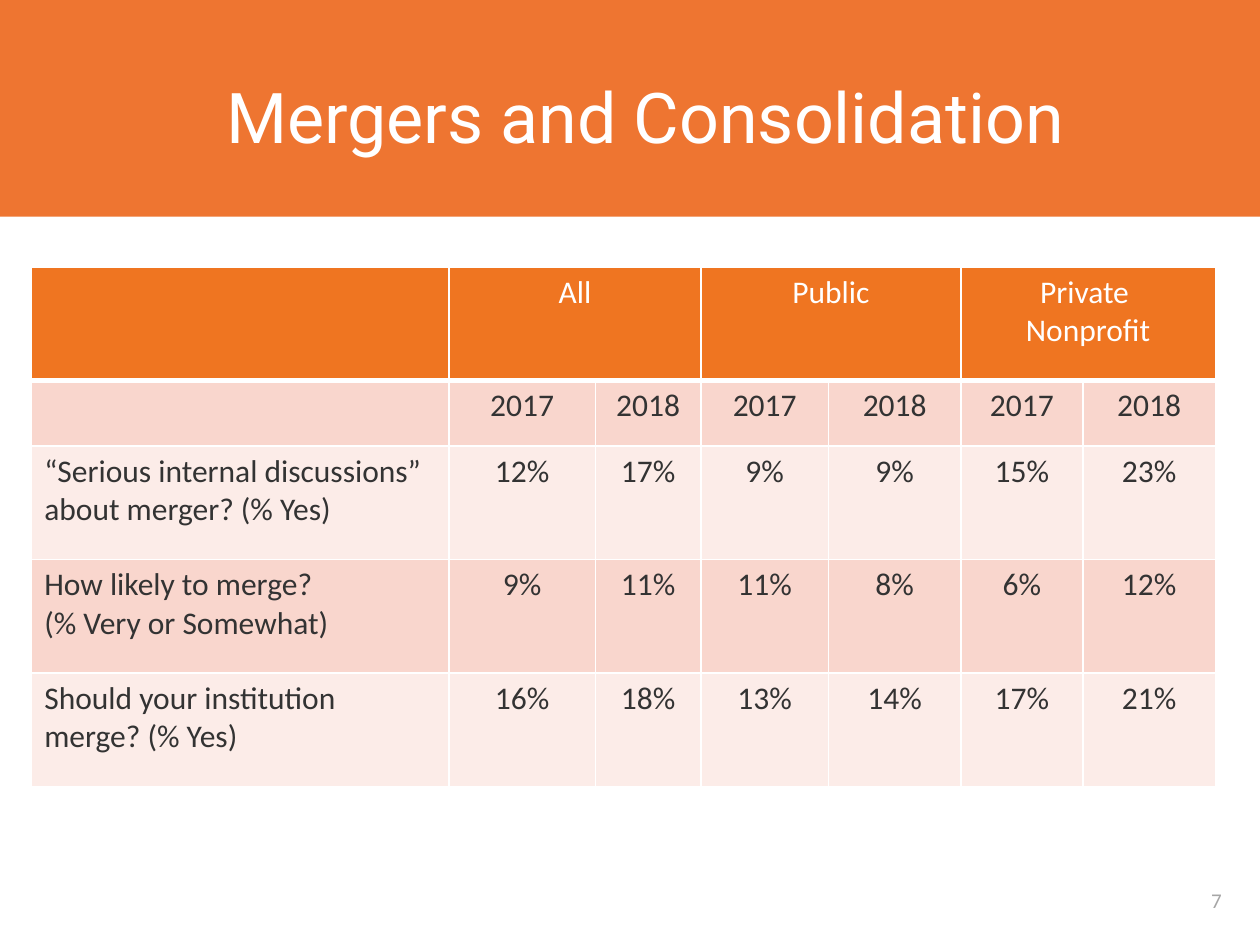
from lxml import etree
from pptx import Presentation
from pptx.dml.color import RGBColor
from pptx.enum.shapes import MSO_SHAPE
from pptx.enum.text import MSO_ANCHOR, PP_ALIGN
from pptx.oxml.ns import qn
from pptx.util import Cm, Pt

RECT = MSO_SHAPE.RECTANGLE
MIDDLE = MSO_ANCHOR.MIDDLE
LEFT, CENTER = PP_ALIGN.LEFT, PP_ALIGN.CENTER

TITLE = "Mergers and Consolidation"
PAGE = "7"
GROUPS = ["All", "Public", "Private \vNonprofit"]
YEARS = ["2017", "2018"]
ROWS = [
    ("“Serious internal discussions” \vabout merger? (% Yes)", [12, 17, 9, 9, 15, 23]),
    ("How likely to merge? \v(% Very or Somewhat)", [9, 11, 11, 8, 6, 12]),
    ("Should your institution merge? (% Yes)", [16, 18, 13, 14, 17, 21]),
]
WIDTHS = [8.41, 2.95, 2.13, 2.57, 2.67, 2.46, 2.67]
TALL, SHORT = 2.29, 1.32

WHITE, INK, GRAY = "FFFFFF", "333333", "A6A6A6"
BAND, HEAD = "EE7531", "EF7521"
STRIPES = ["F9D6CD", "FCECE8"]


def color(code):
    return RGBColor.from_string(code)


def write(frame, text, size, font, ink, align=CENTER):
    """Fill the frame with one styled paragraph and return it."""
    para = frame.paragraphs[0]
    para.text = text
    para.alignment = align
    for run in para.runs:
        run.font.size = Pt(size)
        run.font.name = font
        run.font.color.rgb = color(ink)
    return para


def add_label(slide, box, *style):
    frame = slide.shapes.add_textbox(*map(Cm, box)).text_frame
    frame.word_wrap = True
    frame.vertical_anchor = MIDDLE
    return write(frame, *style)


def add_edges(cell, base):
    """Draw white cell borders, the bottom one as wide as base."""
    props = cell._tc.get_or_add_tcPr()
    for side, width in (("L", 1), ("R", 1), ("T", 1), ("B", base)):
        line = etree.SubElement(props, qn("a:ln" + side), w=str(Pt(width)))
        fill = etree.SubElement(line, qn("a:solidFill"))
        etree.SubElement(fill, qn("a:srgbClr"), val=WHITE)


def add_grid(slide):
    heads = [""]
    for group in GROUPS:
        heads += [group] + [""] * (len(YEARS) - 1)
    data = [heads, [""] + YEARS * len(GROUPS)]
    data += [[name] + [f"{value}%" for value in values] for name, values in ROWS]
    heights = [TALL, SHORT] + [TALL] * len(ROWS)

    table = slide.shapes.add_table(
        len(data), len(WIDTHS), Cm(0.64), Cm(5.38),
        Cm(sum(WIDTHS)), Cm(sum(heights))).table
    for column, width in zip(table.columns, WIDTHS):
        column.width = Cm(width)
    for r, (texts, height) in enumerate(zip(data, heights)):
        table.rows[r].height = Cm(height)
        top = r == 0
        for c, text in enumerate(texts):
            cell = table.cell(r, c)
            add_edges(cell, 3 if top else 1)
            cell.fill.solid()
            cell.fill.fore_color.rgb = color(HEAD if top else STRIPES[(r - 1) % 2])
            write(cell.text_frame, text, 18, "Calibri",
                  WHITE if top else INK, CENTER if c else LEFT)
    step = len(YEARS)
    for c in range(1, len(WIDTHS), step):
        table.cell(0, c).merge(table.cell(0, c + step - 1))


def main():
    deck = Presentation()
    deck.slide_width, deck.slide_height = Cm(25.4), Cm(19.05)
    slide = deck.slides.add_slide(deck.slide_layouts[6])

    band = slide.shapes.add_shape(RECT, Cm(-0.03), 0, Cm(25.45), Cm(4.37))
    band.shadow.inherit = False
    band.fill.solid()
    band.fill.fore_color.rgb = color(BAND)
    band.line.fill.background()

    add_label(slide, (23.65, 17.65, 1.75, 0.99), PAGE, 12, "Calibri", GRAY)
    title = add_label(slide, (0.84, 1.14, 24.33, 2.59), TITLE, 40, "Roboto", WHITE)
    title.line_spacing = 0.9
    add_grid(slide)
    deck.save("out.pptx")


if __name__ == "__main__":
    main()
